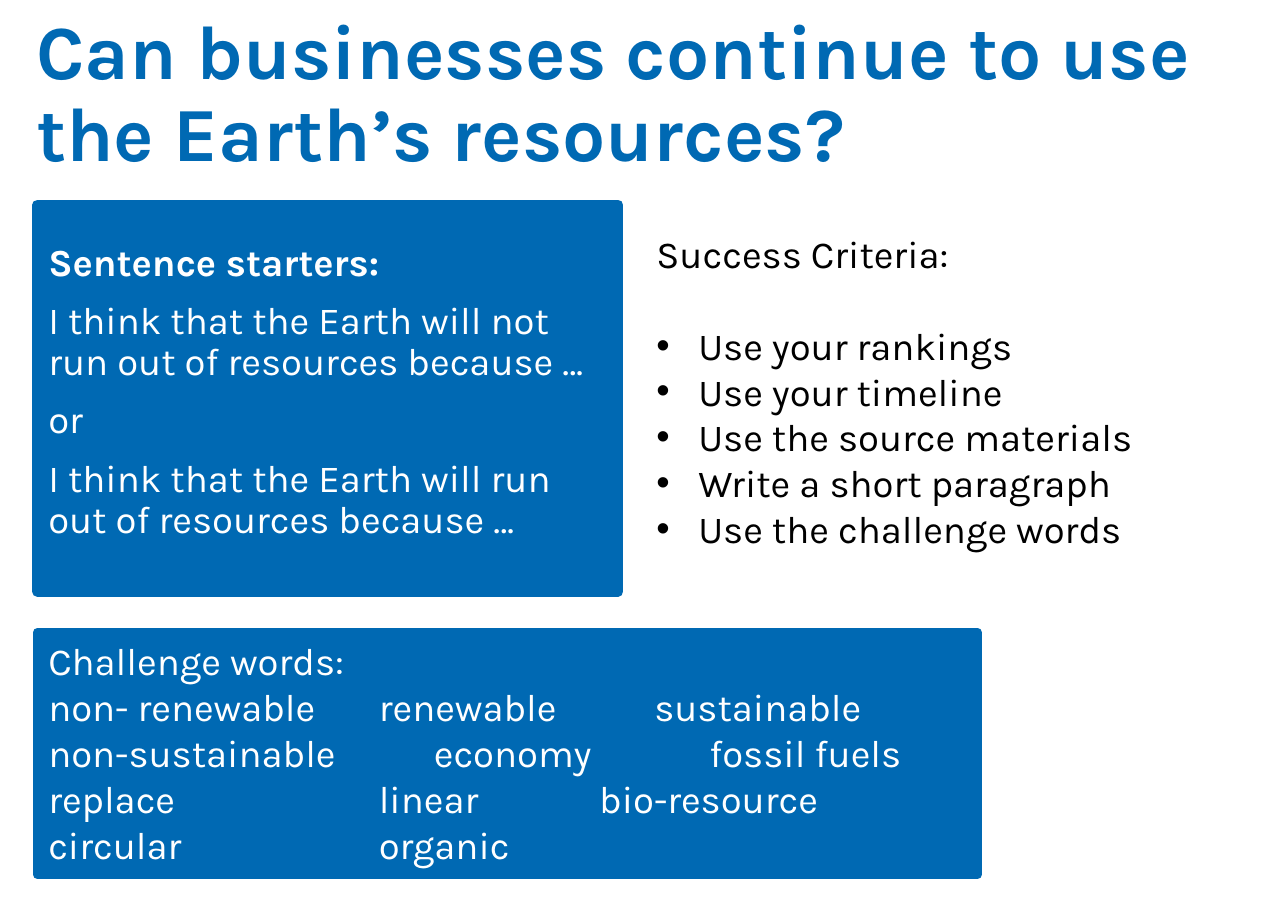
from pptx import Presentation
from pptx.dml.color import RGBColor
from pptx.enum import shapes, text
from pptx.oxml import parse_xml
from pptx.oxml.ns import nsdecls
from pptx.util import Inches, Pt

BLUE = RGBColor(0x00, 0x69, 0xB3)
WHITE = RGBColor(0xFF, 0xFF, 0xFF)
BLACK = RGBColor(0, 0, 0)
FONT = "Karla"

STARTERS = [
    "I think that the Earth will not run out of resources because …",
    "or",
    "I think that the Earth will run out of resources because …",
]
CRITERIA = [
    "Use your rankings",
    "Use your timeline",
    "Use the source materials",
    "Write a short paragraph",
    "Use the challenge words",
]
CHALLENGE_ROWS = [
    (["non- renewable", "renewable", "sustainable"], [3, 5.5]),
    (["non-sustainable", "economy", "fossil fuels"], [3.5, 6]),
    (["replace", "linear", "bio-resource"], [3, 5]),
    (["circular", "organic"], [3]),
]


def write(frame, words, size=25, color=WHITE, bold=False, spacing=1.0,
          before=0, bullet=False, tabs=()):
    first = frame.paragraphs[0]
    paragraph = frame.add_paragraph() if first.runs else first
    paragraph.alignment = text.PP_ALIGN.LEFT
    paragraph.line_spacing = spacing
    paragraph.space_before = Pt(before)
    properties = paragraph._p.get_or_add_pPr()
    if bullet:
        properties.set("marL", str(Inches(0.38)))
        properties.set("indent", str(-Inches(0.38)))
        properties.append(parse_xml(f'<a:buFont {nsdecls("a")} typeface="Arial"/>'))
        properties.append(parse_xml(f'<a:buChar {nsdecls("a")} char="•"/>'))
    if tabs:
        stops = "".join(f'<a:tab pos="{Inches(stop)}" algn="l"/>' for stop in tabs)
        properties.append(parse_xml(f'<a:tabLst {nsdecls("a")}>{stops}</a:tabLst>'))
    run = paragraph.add_run()
    run.text = words
    run.font.name = FONT
    run.font.size = Pt(size)
    run.font.bold = bold
    run.font.color.rgb = color


def text_area(slide, box, anchor=text.MSO_ANCHOR.TOP):
    frame = slide.shapes.add_textbox(*map(Inches, box)).text_frame
    frame.word_wrap = True
    frame.vertical_anchor = anchor
    return frame


def blue_panel(slide, box, border):
    panel = slide.shapes.add_shape(shapes.MSO_SHAPE.RECTANGLE, *map(Inches, box))
    panel.shadow.inherit = False
    panel.fill.solid()
    panel.fill.fore_color.rgb = BLUE
    panel.line.color.rgb = BLUE
    panel.line.width = Pt(border)
    frame = panel.text_frame
    frame.word_wrap = True
    frame.vertical_anchor = text.MSO_ANCHOR.TOP
    return frame


def title(slide, box):
    question = text_area(slide, box, text.MSO_ANCHOR.BOTTOM)
    write(question, "Can businesses continue to use the Earth’s resources?",
          size=50, color=BLUE, bold=True, spacing=0.9)


def sentence_starters(slide, box):
    starters = blue_panel(slide, box, border=7)
    starters.margin_top = Inches(0.35)
    write(starters, "Sentence starters:", bold=True, spacing=0.9)
    for starter in STARTERS:
        write(starters, starter, spacing=0.9, before=11)


def success_criteria(slide, box):
    criteria = text_area(slide, box)
    write(criteria, "Success Criteria:", color=BLACK)
    for index, criterion in enumerate(CRITERIA):
        write(criteria, criterion, color=BLACK, bullet=True,
              before=0 if index else 30)


def challenge_words(slide, box):
    challenge = blue_panel(slide, box, border=6)
    write(challenge, "Challenge words:")
    for row, stops in CHALLENGE_ROWS:
        write(challenge, "\t".join(row), tabs=stops)


def main():
    deck = Presentation()
    deck.slide_width = Inches(11.69)
    deck.slide_height = Inches(8.27)
    slide = deck.slides.add_slide(deck.slide_layouts[6])
    title(slide, (0.23, 0.3, 11.23, 1.37))
    sentence_starters(slide, (0.34, 1.86, 5.27, 3.51))
    success_criteria(slide, (5.86, 2.04, 5.26, 3.05))
    challenge_words(slide, (0.34, 5.74, 8.53, 2.2))
    deck.save("out.pptx")


if __name__ == "__main__":
    main()
